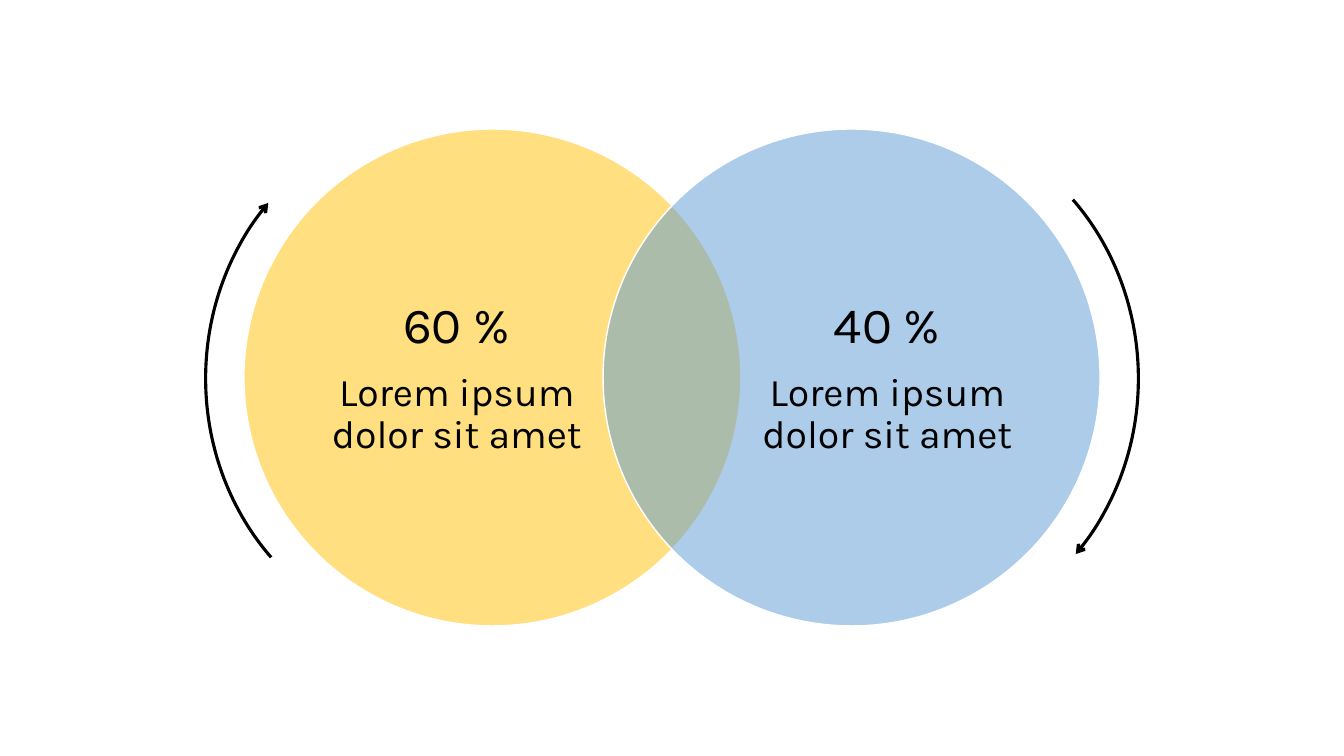
from lxml.etree import SubElement
from pptx import Presentation
from pptx.dml.color import RGBColor
from pptx.enum.shapes import MSO_SHAPE
from pptx.enum.text import MSO_ANCHOR, PP_ALIGN
from pptx.oxml.ns import qn
from pptx.util import Inches, Pt

HUES = {"gold": "FFC000", "blue": "5B9BD5", "ink": "000000", "edge": "FFFFFF"}
DISC = (18.15, 17.07, 36.98, 65.73)
LABEL = (23.33, 24.93, 21.31, 50.27)
ARC = (15.3, 15.6, 35.71, 68.93)
SWEEP = (315.28, 45.72)
SIDES = [("gold", "60 %", False), ("blue", "40 %", True)]
BODY = "Lorem ipsum dolor sit amet"


class Board:
    font = "Karla"
    frame = {"word_wrap": True, "vertical_anchor": MSO_ANCHOR.MIDDLE,
             "margin_left": 0, "margin_right": 0,
             "margin_top": 0, "margin_bottom": 0}
    para = {"alignment": PP_ALIGN.CENTER, "line_spacing": 0.9}

    def __init__(self, deck):
        self.wide, self.high = deck.slide_width, deck.slide_height
        self.slide = deck.slides.add_slide(deck.slide_layouts[6])
        self.group = self.slide.shapes.add_group_shape()

    def place(self, box, right):
        x, y, w, h = box
        if right:
            x = 100 - x - w
        sizes = (self.wide, self.high) * 2
        return [int(size * part / 100) for size, part in zip(sizes, (x, y, w, h))]

    def format(self, item, values):
        for name, value in values.items():
            setattr(item, name, value)

    def hue(self, name):
        return RGBColor.from_string(HUES[name])

    def edge(self, shape, hue, width):
        shape.shadow.inherit = False
        shape.line.color.rgb = self.hue(hue)
        shape.line.width = Pt(width)

    def disc(self, hue, right):
        shape = self.group.shapes.add_shape(MSO_SHAPE.OVAL, *self.place(DISC, right))
        shape.fill.solid()
        shape.fill.fore_color.rgb = self.hue(hue)
        color = shape.fill._xPr.find(qn("a:solidFill"))[0]
        SubElement(color, qn("a:alpha"), val="50000")
        self.edge(shape, "edge", 1)

    def label(self, lines, right):
        box = self.group.shapes.add_textbox(*self.place(LABEL, right))
        frame = box.text_frame
        self.format(frame, self.frame)
        frame.text = "\n".join(text for text, size in lines)
        for para, (text, size) in zip(frame.paragraphs, lines):
            self.format(para, self.para)
            after = SubElement(para._p.get_or_add_pPr(), qn("a:spcAft"))
            SubElement(after, qn("a:spcPct"), val="35000")
            font = para.runs[0].font
            self.format(font, {"name": self.font, "size": Pt(size)})
            font.color.rgb = self.hue("ink")

    def arc(self, right):
        shape = self.slide.shapes.add_shape(MSO_SHAPE.ARC, *self.place(ARC, right))
        for index, angle in enumerate(SWEEP):
            shape.adjustments[index] = angle * 0.6
        shape.rotation = 180 if right else 0
        shape._element.spPr.find(qn("a:xfrm")).set("flipH", "1")
        shape.fill.background()
        self.edge(shape, "ink", 2.25)
        SubElement(shape.line._get_or_add_ln(), qn("a:headEnd"), type="arrow")


def main():
    deck = Presentation()
    deck.slide_width, deck.slide_height = Inches(13.33), Inches(7.5)
    board = Board(deck)
    for hue, share, right in SIDES:
        board.disc(hue, right)
        board.label([(share, 36), (BODY, 28)], right)
    for hue, share, right in SIDES:
        board.arc(right)
    deck.save("out.pptx")


if __name__ == "__main__":
    main()
